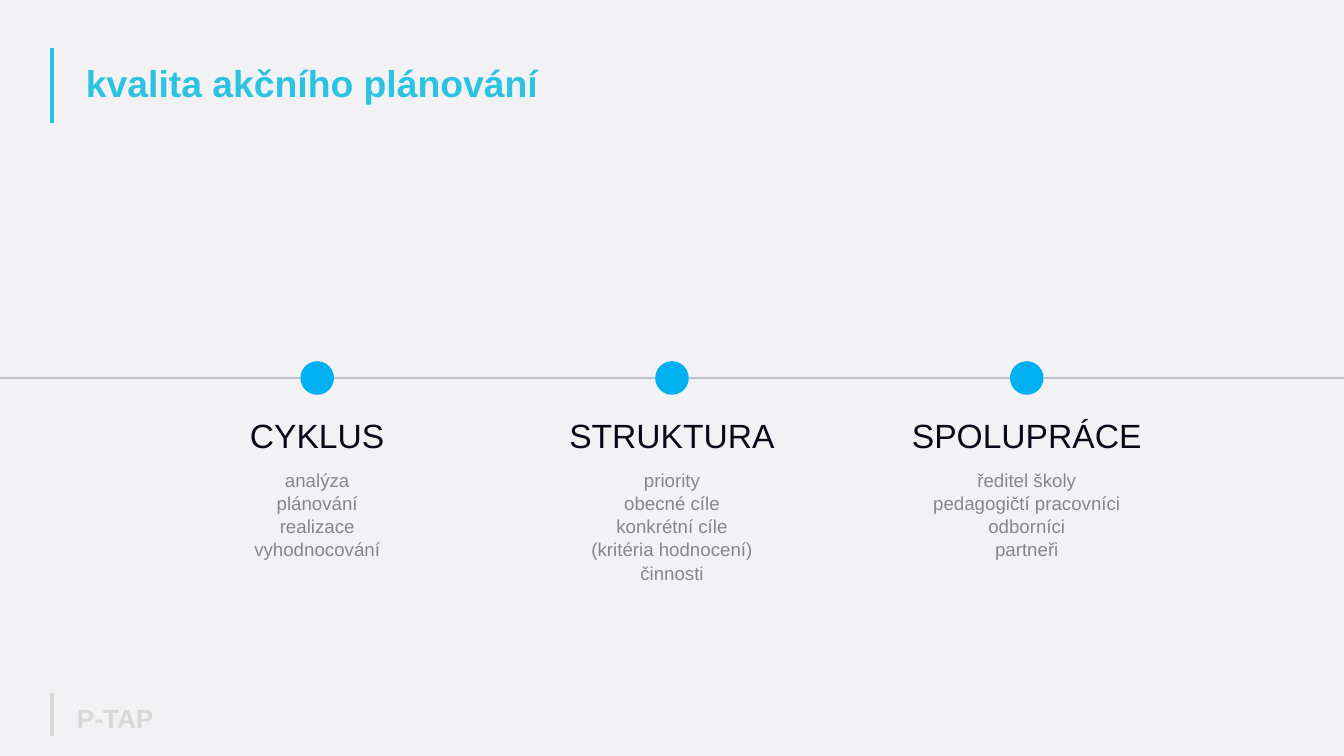
"""Builds a timeline slide on the quality of action planning."""
from lxml import etree
from pptx import Presentation
from pptx.dml.color import RGBColor
from pptx.enum.shapes import MSO_CONNECTOR, MSO_SHAPE
from pptx.enum.text import MSO_ANCHOR, PP_ALIGN
from pptx.oxml.ns import qn
from pptx.util import Cm, Pt

STRAIGHT = MSO_CONNECTOR.STRAIGHT
OVAL = MSO_SHAPE.OVAL
TOP, MIDDLE = MSO_ANCHOR.TOP, MSO_ANCHOR.MIDDLE
LEFT, CENTER = PP_ALIGN.LEFT, PP_ALIGN.CENTER

BACKGROUND = RGBColor(0xF2, 0xF2, 0xF5)
TURQUOISE = RGBColor(0x2B, 0xC3, 0xE1)
PALE_GREY = RGBColor(0xD8, 0xD8, 0xD8)
AXIS_GREY = RGBColor(0xC0, 0xC0, 0xC8)
BLUE = RGBColor(0x00, 0xB0, 0xF0)
NAVY = RGBColor(0x0A, 0x09, 0x1B)
TEXT_GREY = RGBColor(0x85, 0x85, 0x91)

FONT = "Arial"
WIDTH, HEIGHT = 50.8, 28.58
BAR_X = 1.96
AXIS_Y = 14.29
STEP = 13.41
DOT = 1.27
COLUMN_WIDTH = 10.64

STAGES = [
    ("CYKLUS", ["analýza", "plánování", "realizace", "vyhodnocování"]),
    ("STRUKTURA", ["priority", "obecné cíle", "konkrétní cíle",
                   "(kritéria hodnocení)", "činnosti"]),
    ("SPOLUPRÁCE", ["ředitel školy", "pedagogičtí pracovníci",
                    "odborníci", "partneři"]),
]


def add_line(s, x1, y1, x2, y2, color, width):
    """Draw a straight line without shadow."""
    line = s.shapes.add_connector(STRAIGHT, Cm(x1), Cm(y1), Cm(x2), Cm(y2))
    line.line.color.rgb = color
    line.line.width = Pt(width)
    etree.SubElement(line._element.spPr, qn("a:effectLst"))


def add_dot(s, x):
    """Draw a stage dot centred on the axis at x."""
    sp = s.shapes.add_shape(OVAL, Cm(x - DOT / 2), Cm(AXIS_Y - DOT / 2),
                            Cm(DOT), Cm(DOT))
    sp.shadow.inherit = False
    sp.fill.solid()
    sp.fill.fore_color.rgb = BLUE
    sp.line.fill.background()


def add_text(s, lines, x, y, w, h, *, size, color, bold=False,
             align=LEFT, anchor=TOP, spacing=1.0):
    """Add a text box with one paragraph per line."""
    sp = s.shapes.add_textbox(Cm(x), Cm(y), Cm(w), Cm(h))
    tf = sp.text_frame
    tf.word_wrap = True
    tf.vertical_anchor = anchor
    for i, text in enumerate(lines):
        p = tf.add_paragraph() if i else tf.paragraphs[0]
        p.alignment = align
        p.line_spacing = spacing
        r = p.add_run()
        r.text = text
        r.font.name = FONT
        r.font.size = Pt(size)
        r.font.bold = bold
        r.font.color.rgb = color


def add_axis(s, centers):
    """Draw the axis as segments between the dots."""
    starts = [0] + [x + DOT / 2 for x in centers]
    ends = [x - DOT / 2 for x in centers] + [WIDTH]
    for start, end in zip(starts, ends):
        add_line(s, start, AXIS_Y, end, AXIS_Y, AXIS_GREY, 2)


def add_stage(s, x, heading, items):
    """Add a dot with its heading and list below."""
    left = x - COLUMN_WIDTH / 2
    add_dot(s, x)
    add_text(s, [heading], left, 15.49, COLUMN_WIDTH, 1.8,
             size=36, color=NAVY, align=CENTER, spacing=1.04)
    add_text(s, items, left, 17.55, COLUMN_WIDTH, 4.52,
             size=20, color=TEXT_GREY, align=CENTER, spacing=1.04)


def main():
    """Build and save the slide."""
    prs = Presentation()
    prs.slide_width, prs.slide_height = Cm(WIDTH), Cm(HEIGHT)
    s = prs.slides.add_slide(prs.slide_layouts[6])
    s.background.fill.solid()
    s.background.fill.fore_color.rgb = BACKGROUND

    add_line(s, BAR_X, 1.8, BAR_X, 4.65, TURQUOISE, 5)
    add_text(s, ["kvalita akčního plánování"], 3, 2.23, 45.46, 1.8,
             size=40, color=TURQUOISE, bold=True, anchor=MIDDLE)
    add_line(s, BAR_X, 26.19, BAR_X, 27.84, PALE_GREY, 5)
    add_text(s, ["P-TAP"], 2.66, 26.25, 8, 1.8,
             size=28, color=PALE_GREY, bold=True, anchor=MIDDLE)

    centers = [WIDTH / 2 + (i - 1) * STEP for i in range(len(STAGES))]
    add_axis(s, centers)
    for x, (heading, items) in zip(centers, STAGES):
        add_stage(s, x, heading, items)

    prs.save("out.pptx")


if __name__ == "__main__":
    main()
